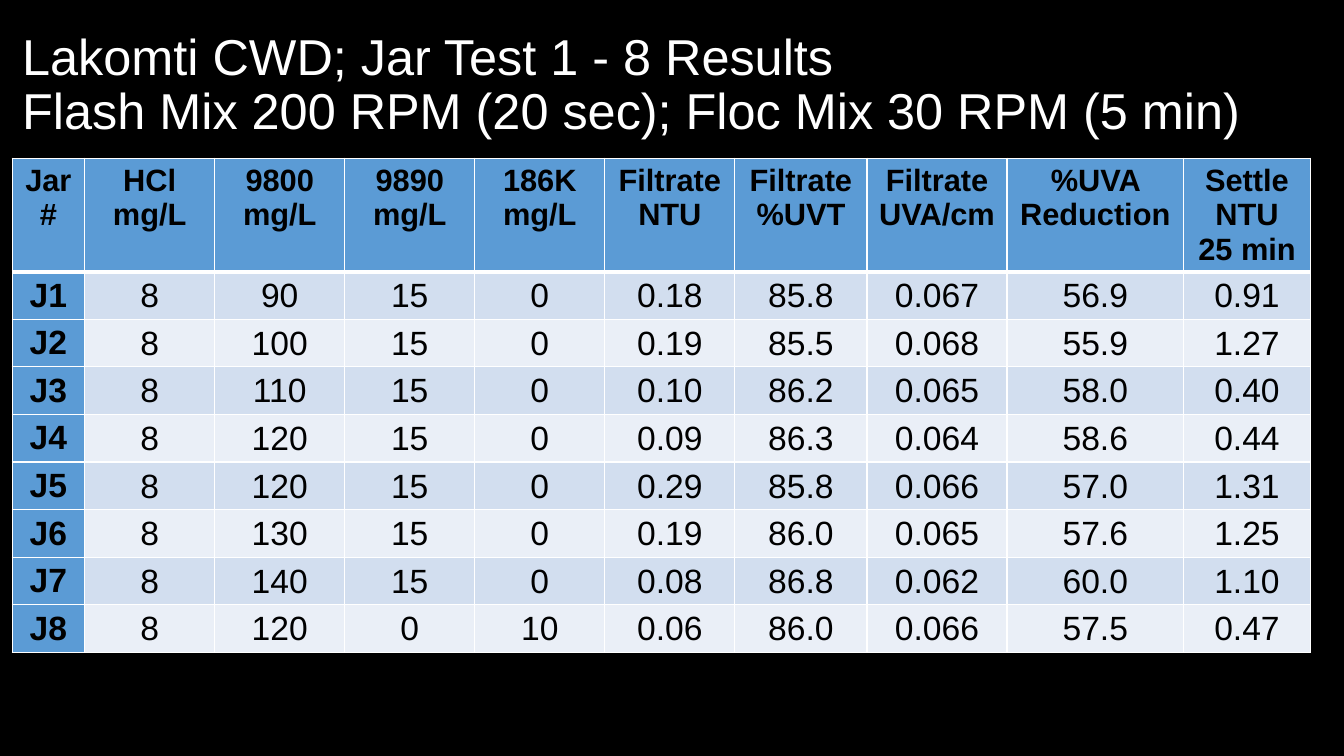
from dataclasses import dataclass
from typing import Any

from lxml.etree import SubElement
from pptx import Presentation
from pptx.dml.color import RGBColor
from pptx.enum.text import MSO_ANCHOR as Anchor, PP_ALIGN as Align
from pptx.oxml.ns import qn
from pptx.table import _Cell as Cell
from pptx.util import Inches, Pt

BLACK, WHITE, BLUE = "000000", "FFFFFF", "5B9BD5"
BANDS = ("D2DEEF", "EAEFF7")
HEADER_HEIGHT, ROW_HEIGHT = 1.12, 0.47


@dataclass(frozen=True)
class Column:
    heading: str
    width: float
    values: tuple[str, ...]


@dataclass(frozen=True)
class CellStyle:
    fill: str
    font: dict[str, Any]
    layout: dict[str, Any]
    bottom_line: float = 1


COLUMNS = (
    Column("Jar#", 0.72, tuple(f"J{number}" for number in range(1, 9))),
    Column("HCl\nmg/L", 1.29, ("8",) * 8),
    Column("9800\nmg/L", 1.29, ("90", "100", "110", "120", "120", "130", "140", "120")),
    Column("9890\nmg/L", 1.29, ("15",) * 7 + ("0",)),
    Column("186K\nmg/L", 1.29, ("0",) * 7 + ("10",)),
    Column("Filtrate\nNTU", 1.29,
           ("0.18", "0.19", "0.10", "0.09", "0.29", "0.19", "0.08", "0.06")),
    Column("Filtrate\n%UVT", 1.31,
           ("85.8", "85.5", "86.2", "86.3", "85.8", "86.0", "86.8", "86.0")),
    Column("Filtrate\nUVA/cm", 1.39,
           ("0.067", "0.068", "0.065", "0.064", "0.066", "0.065", "0.062", "0.066")),
    Column("%UVA Reduction", 1.75,
           ("56.9", "55.9", "58.0", "58.6", "57.0", "57.6", "60.0", "57.5")),
    Column("Settle\nNTU\n25 min", 1.26,
           ("0.91", "1.27", "0.40", "0.44", "1.31", "1.25", "1.10", "0.47")),
)

LABEL_LAYOUT = {"vertical_anchor": Anchor.TOP}
VALUE_LAYOUT = {
    "vertical_anchor": Anchor.MIDDLE,
    "margin_left": Inches(0.01),
    "margin_right": Inches(0.01),
    "margin_top": Inches(0.01),
    "margin_bottom": 0,
}
HEADER = CellStyle(BLUE, {"size": Pt(22), "bold": True}, LABEL_LAYOUT, 3)
JAR = CellStyle(BLUE, {"size": Pt(24), "bold": True}, LABEL_LAYOUT)
VALUES = tuple(
    CellStyle(band, {"size": Pt(24), "bold": False}, VALUE_LAYOUT) for band in BANDS
)


def color(value: str) -> RGBColor:
    return RGBColor.from_string(value)


def apply(target: Any, formats: dict[str, Any]) -> None:
    for name, value in formats.items():
        setattr(target, name, value)


def add_borders(cell: Cell, widths: dict[str, float]) -> None:
    properties = cell._tc.get_or_add_tcPr()
    for side, width in widths.items():
        line = SubElement(properties, qn(f"a:{side}"), w=str(Pt(width)))
        SubElement(SubElement(line, qn("a:solidFill")), qn("a:srgbClr"), val=WHITE)


def fill_cell(cell: Cell, text: str, style: CellStyle, top_line: float = 1) -> None:
    add_borders(cell, {"lnL": 1, "lnR": 1, "lnT": top_line, "lnB": style.bottom_line})
    cell.fill.solid()
    cell.fill.fore_color.rgb = color(style.fill)
    apply(cell, style.layout)
    cell.text = text
    for paragraph in cell.text_frame.paragraphs:
        paragraph.alignment = Align.CENTER
        for run in paragraph.runs:
            apply(run.font, {"name": "Arial"} | style.font)
            run.font.color.rgb = color(BLACK)


def add_title(slide: Any) -> None:
    title = slide.shapes.title
    apply(title, {"left": Inches(0.12), "top": Inches(0.13),
                  "width": Inches(13.03), "height": Inches(1.45)})
    frame = title.text_frame
    apply(frame, {"vertical_anchor": Anchor.MIDDLE, "word_wrap": True})
    paragraph = frame.paragraphs[0]
    paragraph.text = ("Lakomti CWD; Jar Test 1 - 8 Results\v"
                      "Flash Mix 200 RPM (20 sec); Floc Mix 30 RPM (5 min)")
    apply(paragraph, {"alignment": Align.LEFT, "line_spacing": 0.9})
    for run in paragraph.runs:
        apply(run.font, {"name": "Arial", "size": Pt(36)})
        run.font.color.rgb = color(WHITE)


def add_results(slide: Any) -> None:
    jar_count = len(COLUMNS[0].values)
    table = slide.shapes.add_table(
        jar_count + 1, len(COLUMNS), Inches(0.12), Inches(1.57),
        Inches(sum(column.width for column in COLUMNS)),
        Inches(HEADER_HEIGHT + jar_count * ROW_HEIGHT),
    ).table
    apply(table, {"first_row": True, "first_col": True})
    for index, row in enumerate(table.rows):
        row.height = Inches(ROW_HEIGHT if index else HEADER_HEIGHT)
    for column_index, column in enumerate(COLUMNS):
        table.columns[column_index].width = Inches(column.width)
        fill_cell(table.cell(0, column_index), column.heading, HEADER)
        for jar_index, value in enumerate(column.values):
            style = VALUES[jar_index % 2] if column_index else JAR
            top_line = 1 if jar_index else HEADER.bottom_line
            fill_cell(table.cell(jar_index + 1, column_index), value, style, top_line)


def main() -> None:
    presentation = Presentation()
    apply(presentation, {"slide_width": Inches(13.33), "slide_height": Inches(7.5)})
    slide = presentation.slides.add_slide(presentation.slide_layouts[5])

    # Background
    slide.background.fill.solid()
    slide.background.fill.fore_color.rgb = color(BLACK)

    # Title and jar test results
    add_title(slide)
    add_results(slide)
    presentation.save("out.pptx")


if __name__ == "__main__":
    main()
